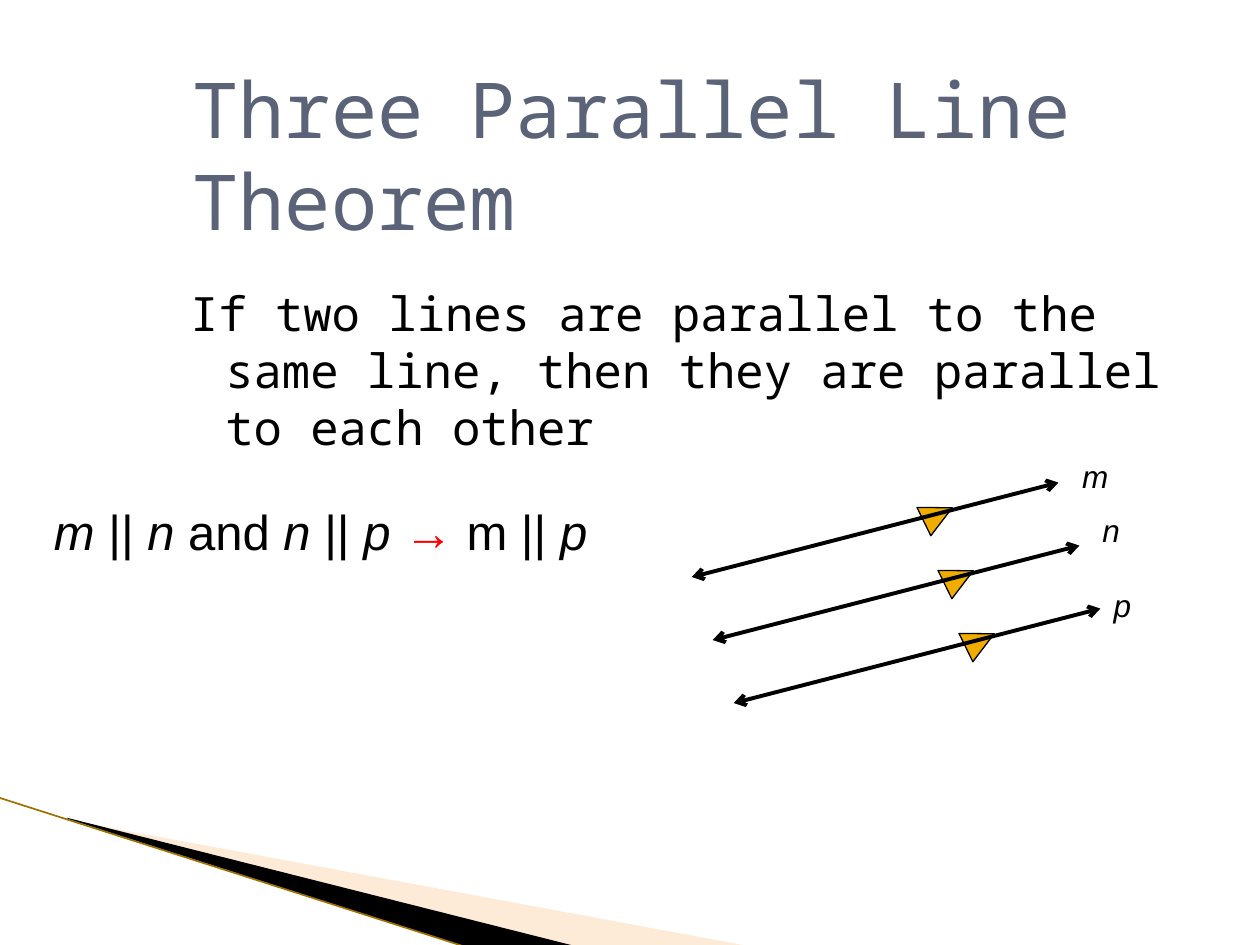
from lxml.etree import SubElement
from pptx import Presentation
from pptx.dml.color import RGBColor
from pptx.enum.shapes import MSO_CONNECTOR as Connector, MSO_SHAPE as Shape
from pptx.enum.text import MSO_ANCHOR as Anchor, MSO_AUTO_SIZE as AutoSize
from pptx.oxml.ns import qn
from pptx.util import Inches, Pt

COLORS = {
    "ink": "000000",
    "title": "5A6378",
    "gold": "F0AD00",
    "edge": "9C7100",
    "peach": "FCCF9B",
    "arrow": "FF0000",
}
COLUMNS, ROWS = 100, 75
MONO, SANS = "Noto Sans Mono", "Arial"


class SlideBuilder:
    """Draws on one page; every length is in cells of a 100 by 75 grid."""

    def __init__(self, deck):
        self.page = deck.slides.add_slide(deck.slide_layouts[6])
        self.column = deck.slide_width / COLUMNS
        self.row = deck.slide_height / ROWS

    def place(self, *lengths):
        """Turn alternating column and row counts into slide lengths."""
        units = (self.column, self.row)
        return [round(length * units[i % 2]) for i, length in enumerate(lengths)]

    def color(self, name):
        return RGBColor.from_string(COLORS[name])

    def fill(self, shape, name, opacity=100):
        shape.shadow.inherit = False
        shape.fill.solid()
        shape.fill.fore_color.rgb = self.color(name)
        if opacity < 100:
            hue = shape.fill._xPr.find(".//" + qn("a:srgbClr"))
            SubElement(hue, qn("a:alpha"), val=str(opacity * 1000))

    def wedge(self, points, name, opacity=100):
        start, *others = [self.place(*point) for point in points]
        builder = self.page.shapes.build_freeform(*start)
        builder.add_line_segments(others, close=True)
        shape = builder.convert_to_shape()
        self.fill(shape, name, opacity)
        shape.line.fill.background()

    def triangle(self, left, top, size, rotation):
        shape = self.page.shapes.add_shape(
            Shape.ISOSCELES_TRIANGLE, *self.place(left, top, size, size))
        shape.rotation = rotation
        self.fill(shape, "gold")
        shape.line.color.rgb = self.color("ink")
        shape.line.width = Pt(0.75)

    def line(self, start, end, name, width, arrows=False):
        line = self.page.shapes.add_connector(
            Connector.STRAIGHT, *self.place(*start, *end))
        line.line.color.rgb = self.color(name)
        line.line.width = Pt(width)
        if arrows:
            for tag in ("a:headEnd", "a:tailEnd"):
                SubElement(line.line._ln, qn(tag), type="arrow")
        SubElement(line._element.spPr, qn("a:effectLst"))

    def text(self, area, runs, size, font, name="ink", wrap=True, anchor=Anchor.TOP):
        """Add a one-paragraph box; runs are (text, style) pairs."""
        box = self.page.shapes.add_textbox(*self.place(*area))
        frame = box.text_frame
        frame.word_wrap = wrap
        frame.auto_size = AutoSize.NONE if wrap else AutoSize.SHAPE_TO_FIT_TEXT
        frame.vertical_anchor = anchor
        para = frame.paragraphs[0]
        for words, style in runs:
            span = para.add_run()
            span.text = words
            span.font.name = font
            span.font.size = Pt(size)
            span.font.italic = style == "italic"
            span.font.bold = style == "arrow"
            span.font.color.rgb = self.color("arrow" if style == "arrow" else name)
        return para

    def hanging_text(self, area, words, size, font, margin, indent):
        para = self.text(area, [(words, "plain")], size, font)
        props = para._p.get_or_add_pPr()
        props.set("marL", str(self.place(margin)[0]))
        props.set("indent", str(self.place(indent)[0]))


def main():
    deck = Presentation()
    deck.slide_width, deck.slide_height = Inches(10), Inches(7.5)
    slide = SlideBuilder(deck)

    slide.wedge([(5.5, 65.1), (59.5, 75.1), (45.6, 75.1), (5.5, 65)], "peach", 40)
    slide.wedge([(5.3, 64.9), (45.7, 75.1), (37.2, 75.2), (5.4, 65)], "ink")
    slide.line((-0.1, 63.3), (37.1, 75.2), "edge", 0.95)

    slide.hanging_text(
        (12.9, 22.1, 85, 16.3),
        "If two lines are parallel to the same line, "
        "then they are parallel to each other",
        27, MONO, margin=4, indent=-2.8)

    labels = [("m", 84.9, 35.8, 4.1), ("n", 86.5, 40.1, 3.4), ("p", 87.4, 46, 3.4)]
    offsets = [(5 / 3 * i, 5 * i) for i in range(len(labels))]
    for across, down in offsets:
        slide.triangle(73.2 + across, 39.6 + down, 2.5, rotation=64)
    for across, down in offsets:
        slide.line((54.9 + across, 45.8 + down), (84 + across, 38.3 + down),
                   "ink", 2.25, arrows=True)
    for letter, left, top, width in labels:
        slide.text((left, top, width, 4), [(letter, "italic")], 18, SANS, wrap=False)

    statement = [
        ("m", "italic"), (" || ", "plain"), ("n", "italic"), (" and ", "plain"),
        ("n", "italic"), (" || ", "plain"), ("p ", "italic"), ("→", "arrow"),
        (" m || ", "plain"), ("p", "italic"),
    ]
    slide.text((3.3, 39.3, 44.8, 5.7), statement, 28, SANS, wrap=False)
    slide.text((14.3, 7.5, 85.2, 12.5), [("Three Parallel Line Theorem", "plain")],
               44, MONO, "title", anchor=Anchor.BOTTOM)

    deck.save("out.pptx")


if __name__ == "__main__":
    main()
